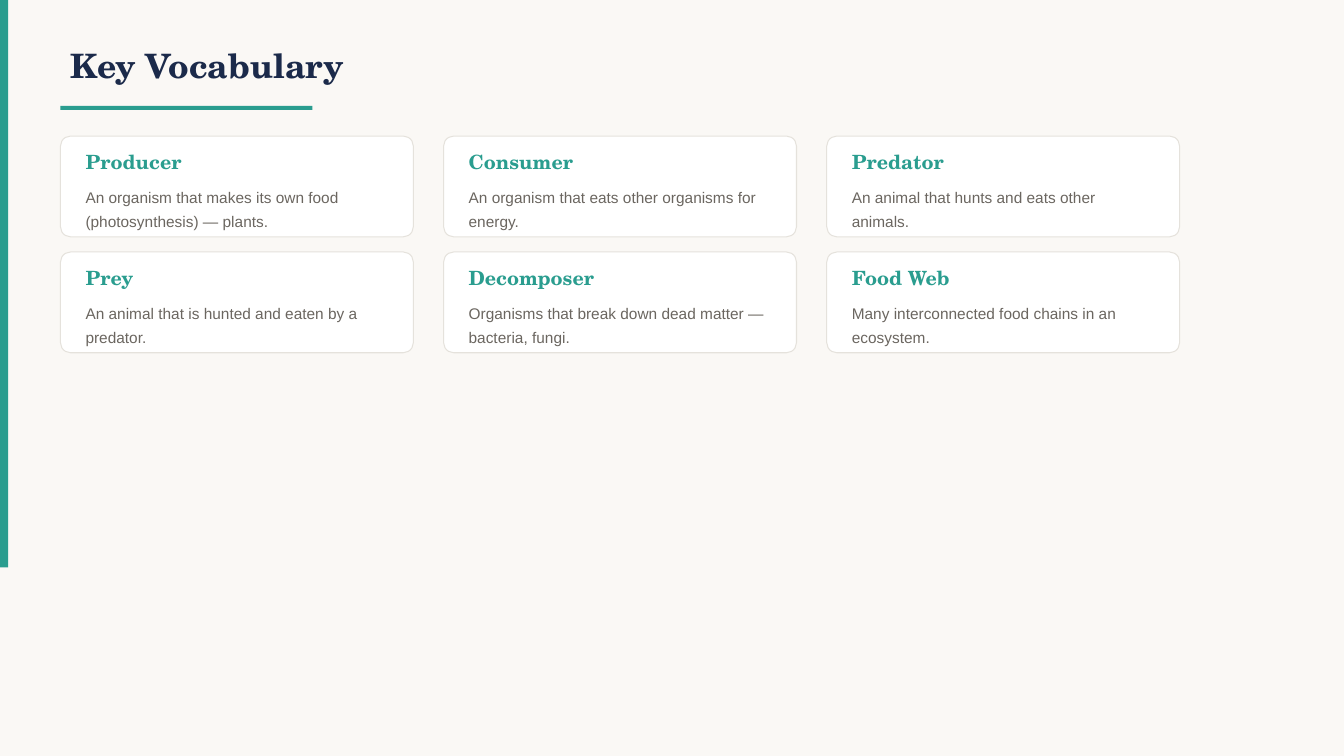
from pptx import Presentation
from pptx import util as u
from pptx.dml.color import RGBColor
from pptx.enum import shapes, text

CREAM = RGBColor(0xFA, 0xF8, 0xF5)
TEAL = RGBColor(0x2A, 0x9D, 0x8F)
NAVY = RGBColor(0x1B, 0x2A, 0x4A)
WHITE = RGBColor(0xFF, 0xFF, 0xFF)
BORDER = RGBColor(0xE5, 0xE2, 0xDC)
GRAY = RGBColor(0x6B, 0x66, 0x60)

VOCABULARY = [
    ("Producer", "An organism that makes its own food (photosynthesis) — plants."),
    ("Consumer", "An organism that eats other organisms for energy."),
    ("Predator", "An animal that hunts and eats other animals."),
    ("Prey", "An animal that is hunted and eaten by a predator."),
    ("Decomposer", "Organisms that break down dead matter — bacteria, fungi."),
    ("Food Web", "Many interconnected food chains in an ecosystem."),
]
COLUMNS = 3
CARD_LEFT, CARD_TOP = 0.6, 1.35
CARD_WIDTH, CARD_HEIGHT = 3.5, 1
COLUMN_GAP, ROW_GAP = 0.3, 0.15


class VocabularySlide:
    heading_font = "TeX Gyre Schola"
    body_font = "Arial"

    def __init__(self, presentation):
        self.slide = presentation.slides.add_slide(presentation.slide_layouts[6])
        background = self.slide.background.fill
        background.solid()
        background.fore_color.rgb = CREAM

    def add_shape(self, kind, left, top, width, height, color):
        shape = self.slide.shapes.add_shape(
            kind, u.Inches(left), u.Inches(top), u.Inches(width), u.Inches(height))
        shape.shadow.inherit = False
        shape.fill.solid()
        shape.fill.fore_color.rgb = color
        shape.line.fill.background()
        return shape

    def add_bar(self, left, top, width, height):
        self.add_shape(shapes.MSO_SHAPE.RECTANGLE, left, top, width, height, TEAL)

    def add_text(self, content, left, top, width, height, size, color,
                 heading=True, line_spacing=None):
        box = self.slide.shapes.add_textbox(
            u.Inches(left), u.Inches(top), u.Inches(width), u.Inches(height))
        frame = box.text_frame
        frame.word_wrap = True
        frame.vertical_anchor = text.MSO_ANCHOR.MIDDLE
        paragraph = frame.paragraphs[0]
        paragraph.text = content
        paragraph.line_spacing = line_spacing
        paragraph.font.name = self.heading_font if heading else self.body_font
        paragraph.font.size = u.Pt(size)
        paragraph.font.bold = heading
        paragraph.font.color.rgb = color

    def add_card(self, left, top, term, definition):
        card = self.add_shape(shapes.MSO_SHAPE.ROUNDED_RECTANGLE,
                              left, top, CARD_WIDTH, CARD_HEIGHT, WHITE)
        card.adjustments[0] = 0.1
        card.line.color.rgb = BORDER
        card.line.width = u.Pt(0.75)
        text_left, text_width = left + 0.15, CARD_WIDTH - 0.3
        self.add_text(term, text_left, top + 0.08, text_width, 0.35, 14, TEAL)
        self.add_text(definition, text_left, top + 0.45, text_width, 0.5, 11, GRAY,
                      heading=False, line_spacing=1.3)


def main():
    presentation = Presentation()
    presentation.slide_width = u.Inches(13.33)
    presentation.slide_height = u.Inches(7.5)
    slide = VocabularySlide(presentation)

    # Side accent, title and underline
    slide.add_bar(0, 0, 0.08, 5.63)
    slide.add_text("Key Vocabulary", 0.6, 0.3, 10, 0.7, 24, NAVY)
    slide.add_bar(0.6, 1.05, 2.5, 0.04)

    # Grid of vocabulary cards
    for index, (term, definition) in enumerate(VOCABULARY):
        row, column = divmod(index, COLUMNS)
        slide.add_card(CARD_LEFT + column * (CARD_WIDTH + COLUMN_GAP),
                       CARD_TOP + row * (CARD_HEIGHT + ROW_GAP),
                       term, definition)

    presentation.save("out.pptx")


if __name__ == "__main__":
    main()
